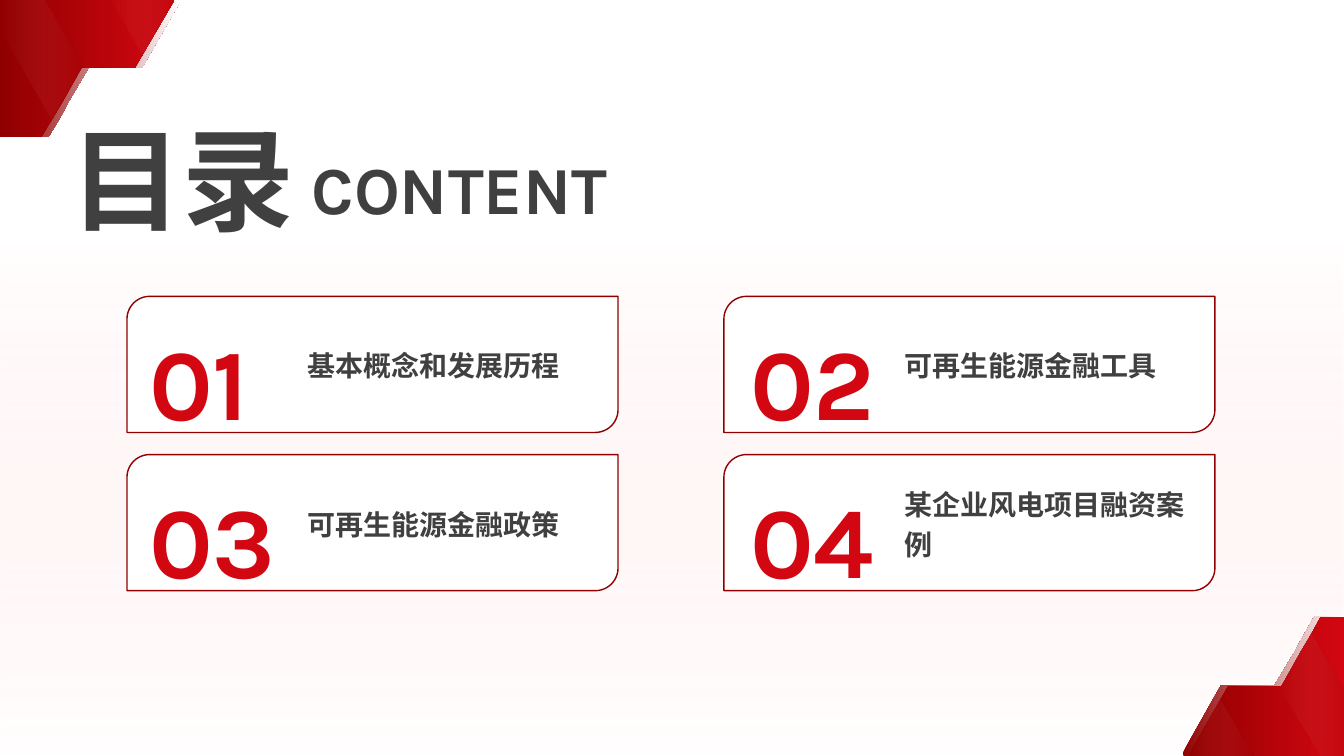
from dataclasses import dataclass
from typing import Any, Optional

import pptx
import pptx.dml.color
import pptx.enum.shapes
import pptx.enum.text
import pptx.oxml
import pptx.oxml.ns
import pptx.util

Inches = pptx.util.Inches
qn = pptx.oxml.ns.qn
ALIGN = pptx.enum.text.PP_ALIGN
ANCHOR = pptx.enum.text.MSO_ANCHOR
FIT = pptx.enum.text.MSO_AUTO_SIZE
SHAPE = pptx.enum.shapes.MSO_SHAPE


@dataclass(frozen=True)
class Stop:
    place: int
    color: str
    alpha: int = 100


@dataclass(frozen=True)
class Blend:
    stops: tuple[Stop, ...]
    angle: int


@dataclass(frozen=True)
class Style:
    size: int
    font: str
    space: float
    color: str = ""
    blend: Optional[Blend] = None


class Theme:
    RED, DARK, WHITE, GREY = "D30711", "910000", "FFFFFF", "404040"
    LATIN, HAN = "Karla", "Noto Sans CJK SC"
    WASH = Blend((Stop(0, "FDC6C9", 0), Stop(68, WHITE, 57)), 270)
    EDGE = Blend((Stop(0, DARK), Stop(100, WHITE)), 0)
    BODY = Blend((Stop(0, DARK), Stop(100, RED)), 0)
    SHADE = Blend((Stop(0, DARK, 22), Stop(99, "FFB6B6", 0)), 180)
    FRAME = Blend((Stop(0, RED), Stop(50, DARK), Stop(100, DARK)), 45)
    TITLE = Style(80, LATIN, 1.1, GREY)
    SUB = Style(48, LATIN, 1.1, GREY)
    COUNT = Style(72, LATIN, 1.1, blend=Blend((Stop(0, RED), Stop(100, DARK)), 45))
    LABEL = Style(20, HAN, 1.2, GREY)


@dataclass(frozen=True)
class Facet:
    blend: Blend
    points: tuple[tuple[float, float], ...]


@dataclass(frozen=True)
class Card:
    count: str
    label: str
    width: float = 1.6


FACETS = (
    Facet(Theme.EDGE, ((13.04, 6.11), (13.33, 6.11), (13.33, 7.5), (11.74, 7.5), (11.73, 7.47),
                       (12.11, 6.8), (12.64, 6.8), (12.84, 6.47), (12.92, 6.32))),
    Facet(Theme.BODY, ((13.1, 6.12), (13.33, 6.12), (13.33, 7.5), (11.8, 7.5), (11.79, 7.48),
                       (12.18, 6.81), (12.71, 6.81), (12.9, 6.47), (12.99, 6.32))),
    Facet(Theme.SHADE, ((12.1, 6.93), (12.43, 7.5), (11.8, 7.5), (11.79, 7.48))),
    Facet(Theme.SHADE, ((13, 6.28), (13.33, 6.85), (13.33, 7.5), (13.09, 7.5), (12.69, 6.82))),
    Facet(Theme.EDGE, ((0, 0), (1.79, 0), (1.79, 0.01), (1.41, 0.67), (0.88, 0.67),
                       (0.68, 1.01), (0.6, 1.16), (0.48, 1.36), (0, 1.36))),
    Facet(Theme.BODY, ((0, 0), (1.73, 0), (1.34, 0.67), (0.81, 0.67), (0.62, 1.01),
                       (0.53, 1.16), (0.41, 1.36), (0, 1.36))),
    Facet(Theme.SHADE, ((1.1, 0), (1.73, 0), (1.42, 0.54), (1.41, 0.54))),
    Facet(Theme.SHADE, ((0, 0), (0.44, 0), (0.82, 0.66), (0.51, 1.19), (0, 0.31))),
)
CARDS = (
    Card("01", "基本概念和发展历程", 1.43),
    Card("02", "可再生能源金融工具"),
    Card("03", "可再生能源金融政策"),
    Card("04", "某企业风电项目融资案例"),
)
LEFT, TOP, STEP_X, STEP_Y = 1.26, 2.94, 5.92, 1.57


def rgb(color: str) -> Any:
    return pptx.dml.color.RGBColor.from_string(color)


def shade(fill: Any, host: Any, blend: Blend) -> None:
    """Give a fill, held by the XML element host, the stops of a blend."""
    stops = "".join(
        f'<a:gs pos="{s.place * 1000}"><a:srgbClr val="{s.color}">'
        f'<a:alpha val="{s.alpha * 1000}"/></a:srgbClr></a:gs>' for s in blend.stops)
    fill.gradient()
    host.replace(host.find(qn("a:gradFill")), pptx.oxml.parse_xml(
        f'<a:gradFill {pptx.oxml.ns.nsdecls("a")} rotWithShape="1"><a:gsLst>{stops}</a:gsLst>'
        f'<a:lin ang="{blend.angle * 60000}" scaled="0"/></a:gradFill>'))


def coat(shape: Any, blend: Blend) -> None:
    """Blend-fill a shape, with no line or shadow."""
    shape.shadow.inherit = False
    shape.line.fill.background()
    shade(shape.fill, shape.element.spPr, blend)


def write(frame: Any, text: str, style: Style, inset: tuple[float, float] = (0, 0),
          align: Any = ALIGN.LEFT, anchor: Any = ANCHOR.TOP,
          wrap: bool = True, fit: Any = FIT.NONE) -> None:
    frame.text = text
    frame.word_wrap, frame.auto_size, frame.vertical_anchor = wrap, fit, anchor
    frame.margin_left = frame.margin_right = Inches(inset[0])
    frame.margin_top = frame.margin_bottom = Inches(inset[1])
    line = frame.paragraphs[0]
    line.alignment, line.line_spacing = align, style.space
    run = line.runs[0]
    font = run.font
    font.size, font.bold, font.name = pptx.util.Pt(style.size), True, style.font
    props = run._r.get_or_add_rPr()
    if style.blend:
        shade(font.fill, props, style.blend)
    else:
        font.color.rgb = rgb(style.color)
    props.find(qn("a:latin")).addnext(pptx.oxml.parse_xml(
        f'<a:ea {pptx.oxml.ns.nsdecls("a")} typeface="{Theme.HAN}"/>'))


def add_box(shapes: Any, x: float, y: float, w: float, h: float) -> Any:
    return shapes.add_textbox(Inches(x), Inches(y), Inches(w), Inches(h)).text_frame


def add_facet(shapes: Any, facet: Facet) -> None:
    points = [(Inches(x), Inches(y)) for x, y in facet.points]
    pen = shapes.build_freeform(*points[0])
    pen.add_line_segments(points[1:], close=True)
    coat(pen.convert_to_shape(), facet.blend)


def add_card(shapes: Any, card: Card, row: int, col: int) -> None:
    x, y = LEFT + col * STEP_X, TOP + row * STEP_Y
    frame = shapes.add_shape(SHAPE.ROUND_2_DIAG_RECTANGLE,
                             Inches(x), Inches(y), Inches(4.87), Inches(1.35))
    frame.shadow.inherit = False
    frame.fill.solid()
    frame.fill.fore_color.rgb = rgb(Theme.WHITE)
    frame.line.width = pptx.util.Pt(1)
    shade(frame.line.fill, frame.element.spPr.find(qn("a:ln")), Theme.FRAME)
    write(add_box(shapes, x + 0.11 + 0.04 * col, y + 0.05, card.width, 1.21),
          card.count, Theme.COUNT, (0.11, 0.06), wrap=False)
    write(add_box(shapes, x + 1.79, y + 0.05, 2.99, 1.21),
          card.label, Theme.LABEL, anchor=ANCHOR.MIDDLE)


def add_title(shapes: Any) -> None:
    title = shapes.title
    title.left, title.top = Inches(-0.41), Inches(0.96)
    title.width, title.height = Inches(4.44), Inches(1.48)
    title.element.getparent().append(title.element)
    write(title.text_frame, "目录", Theme.TITLE, align=ALIGN.CENTER, fit=FIT.SHAPE_TO_FIT_TEXT)
    write(add_box(shapes, 3.09, 1.38, 6.08, 0.89), "CONTENT", Theme.SUB,
          fit=FIT.SHAPE_TO_FIT_TEXT)


def main() -> None:
    deck = pptx.Presentation()
    deck.slide_width, deck.slide_height = Inches(13.33), Inches(7.5)
    shapes = deck.slides.add_slide(deck.slide_layouts[5]).shapes
    coat(shapes.add_shape(SHAPE.RECTANGLE, 0, 0, deck.slide_width, deck.slide_height), Theme.WASH)
    for facet in FACETS:
        add_facet(shapes, facet)
    add_title(shapes)
    for place, card in enumerate(CARDS):
        add_card(shapes, card, *divmod(place, 2))
    deck.save("out.pptx")


if __name__ == "__main__":
    main()
